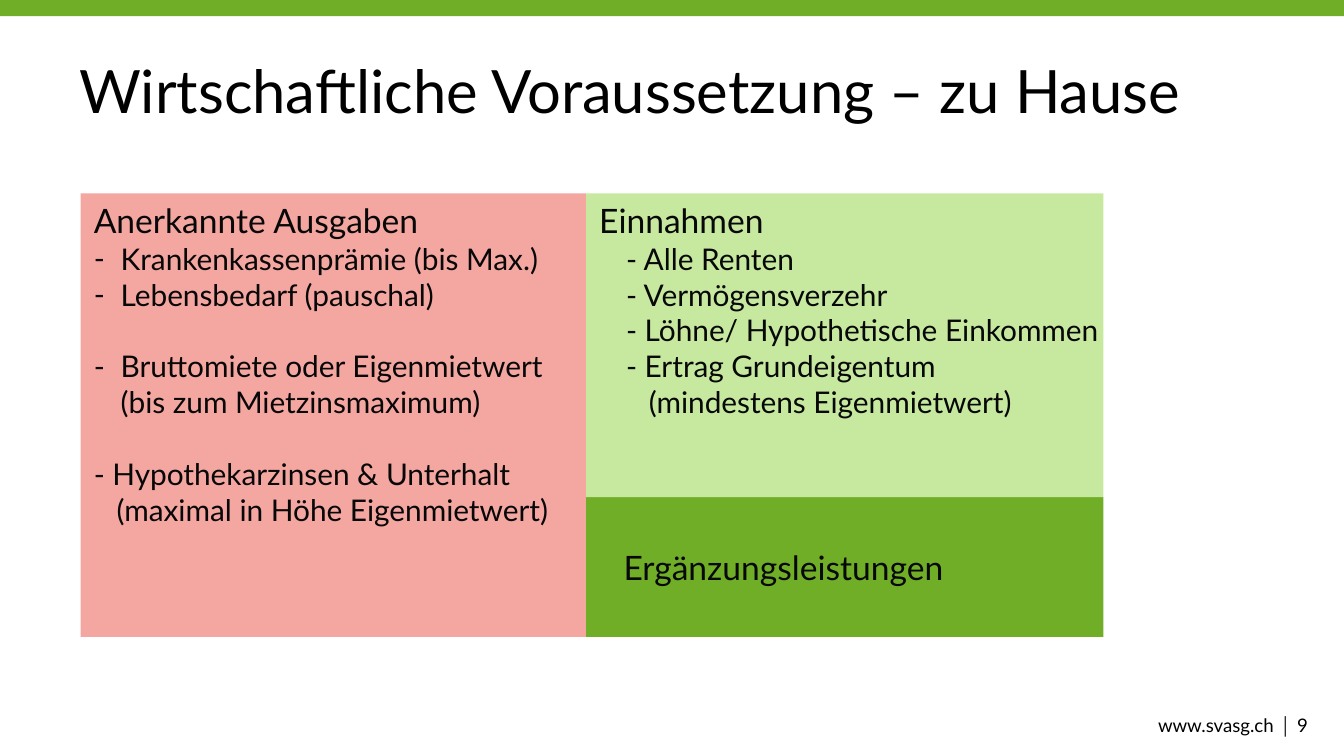
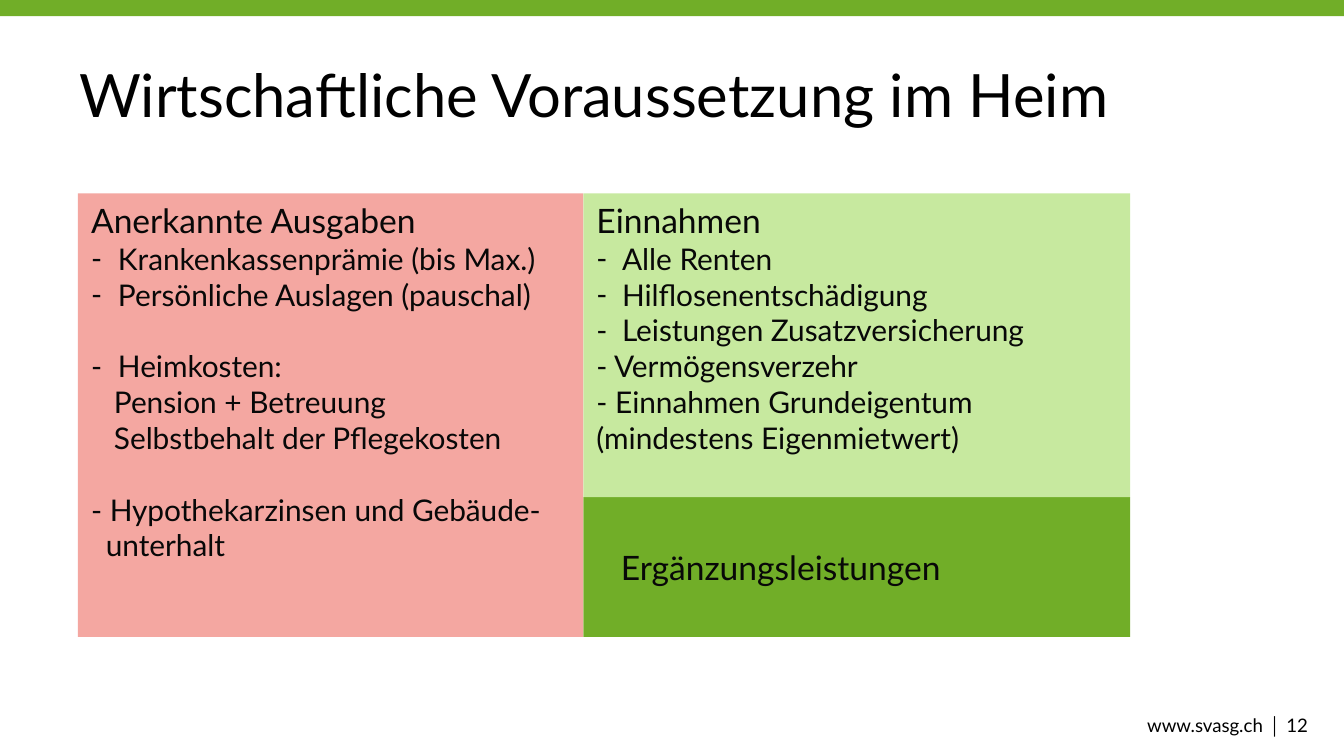
from dataclasses import dataclass
from lxml.etree import SubElement
from pptx import Presentation
from pptx.dml.color import RGBColor
from pptx.enum.shapes import MSO_SHAPE
from pptx.enum.text import MSO_ANCHOR, PP_ALIGN
from pptx.oxml.ns import qn
from pptx.util import Inches, Pt


@dataclass(frozen=True)
class Theme:
    font: str = "Lato"
    black: str = "000000"
    ink: str = "080808"
    green: str = "71AE28"
    light_green: str = "C7E99F"
    red: str = "F4A7A1"
    title: int = 32
    heading: int = 18
    body: int = 16
    footer: int = 10
    gap: float = 19.2


theme = Theme()


def write(frame, text, size=theme.body, color=theme.ink, align=PP_ALIGN.LEFT,
          indent=0, hang=0, bullet=None, gap=0):
    para = frame.paragraphs[0] if not frame.text else frame.add_paragraph()
    para.alignment = align
    para.space_before = Pt(gap)
    properties = para._p.get_or_add_pPr()
    properties.set("marL", str(Inches(indent)))
    properties.set("indent", str(-Inches(hang)))
    if bullet:
        SubElement(properties, qn("a:buFont"), typeface=theme.font)
        SubElement(properties, qn("a:buChar"), char=bullet)
    else:
        SubElement(properties, qn("a:buNone"))
    for number, line in enumerate(text.split("\n")):
        if number:
            line_break = SubElement(para._p, qn("a:br"))
            SubElement(line_break, qn("a:rPr"), sz=str(size * 100))
        span = para.add_run()
        span.text = line
        span.font.name = theme.font
        span.font.size = Pt(size)
        span.font.color.rgb = RGBColor.from_string(color)


def add_panel(page, left, top, width, height, fill=None, anchor=MSO_ANCHOR.TOP, inset=0.1, wrap=False):
    place = [Inches(length) for length in (left, top, width, height)]
    if fill:
        box = page.shapes.add_shape(MSO_SHAPE.RECTANGLE, *place)
        box.shadow.inherit = False
        box.fill.solid()
        box.fill.fore_color.rgb = RGBColor.from_string(fill)
        box.line.fill.background()
    else:
        box = page.shapes.add_textbox(*place)
    frame = box.text_frame
    frame.word_wrap = wrap
    frame.vertical_anchor = anchor
    frame.margin_left = Inches(inset)
    return frame


dash = dict(indent=0.2, hang=0.2, bullet="-")
narrow_dash = dict(indent=0.19, hang=0.19, bullet="-")
gap = dict(gap=theme.gap)
shifted = dict(indent=0.2)
nested = dict(indent=0.17)

slides = [
    dict(
        title="Wirtschaftliche Voraussetzung – zu Hause", title_top=0.2,
        number=9, left=0.6, income_width=3.85,
        expenses=[
            ("Krankenkassenprämie (bis Max.)", dash),
            ("Lebensbedarf (pauschal)", dash),
            ("Bruttomiete oder Eigenmietwert\n(bis zum Mietzinsmaximum)", dash | gap),
            ("- Hypothekarzinsen & Unterhalt", gap),
            ("(maximal in Höhe Eigenmietwert)", nested),
        ],
        income=[
            ("- Alle Renten", shifted),
            ("- Vermögensverzehr", shifted),
            ("- Löhne/ Hypothetische Einkommen", shifted),
            ("- Ertrag Grundeigentum", shifted),
            ("(mindestens Eigenmietwert)", dict(indent=0.37)),
        ],
    ),
    dict(
        title="Wirtschaftliche Voraussetzung im Heim", title_top=0.23,
        number=12, left=0.58, income_width=4.07,
        expenses=[
            ("Krankenkassenprämie (bis Max.)", dash),
            ("Persönliche Auslagen (pauschal)", dash),
            ("Heimkosten:", dash | gap),
            ("Pension + Betreuung", nested),
            ("Selbstbehalt der Pflegekosten", nested),
            ("- Hypothekarzinsen und Gebäude-", gap),
            ("unterhalt", dict(indent=0.11)),
        ],
        income=[
            ("Alle Renten", narrow_dash),
            ("Hilflosenentschädigung", narrow_dash),
            ("Leistungen Zusatzversicherung", narrow_dash),
            ("- Vermögensverzehr", {}),
            ("- Einnahmen Grundeigentum", {}),
            ("(mindestens Eigenmietwert)", {}),
        ],
    ),
]

panel_top = 1.44
panel_height = 3.3
expenses_width = 3.76
income_height = 2.26

deck = Presentation()
deck.slide_width = Inches(10)
deck.slide_height = Inches(10) * 9 // 16

for content in slides:
    page = deck.slides.add_slide(deck.slide_layouts[6])
    footer = add_panel(page, 6.4, 5.26, 3.43, 0.27, anchor=MSO_ANCHOR.MIDDLE, wrap=True)
    write(footer, f"www.svasg.ch │ {content['number']}", size=theme.footer,
          color=theme.black, align=PP_ALIGN.RIGHT)
    add_panel(page, -0.02, 0, 10.03, 0.12, fill=theme.green)
    title = add_panel(page, 0.49, content["title_top"], 8.68, 0.94, anchor=MSO_ANCHOR.MIDDLE, wrap=True)
    write(title, content["title"], size=theme.title, color=theme.black)

    left = content["left"]
    middle = left + expenses_width
    width = content["income_width"]
    benefits = add_panel(page, middle, panel_top + income_height, width, panel_height - income_height,
                         fill=theme.green, anchor=MSO_ANCHOR.MIDDLE, inset=0.28)
    write(benefits, "Ergänzungsleistungen", size=theme.heading)
    income = add_panel(page, middle, panel_top, width, income_height, fill=theme.light_green)
    expenses = add_panel(page, left, panel_top, expenses_width, panel_height, fill=theme.red)
    for frame, heading, items in (
        (income, "Einnahmen", content["income"]),
        (expenses, "Anerkannte Ausgaben", content["expenses"]),
    ):
        write(frame, heading, size=theme.heading, indent=0.2, hang=0.2)
        for text, style in items:
            write(frame, text, **style)

deck.save("out.pptx")
